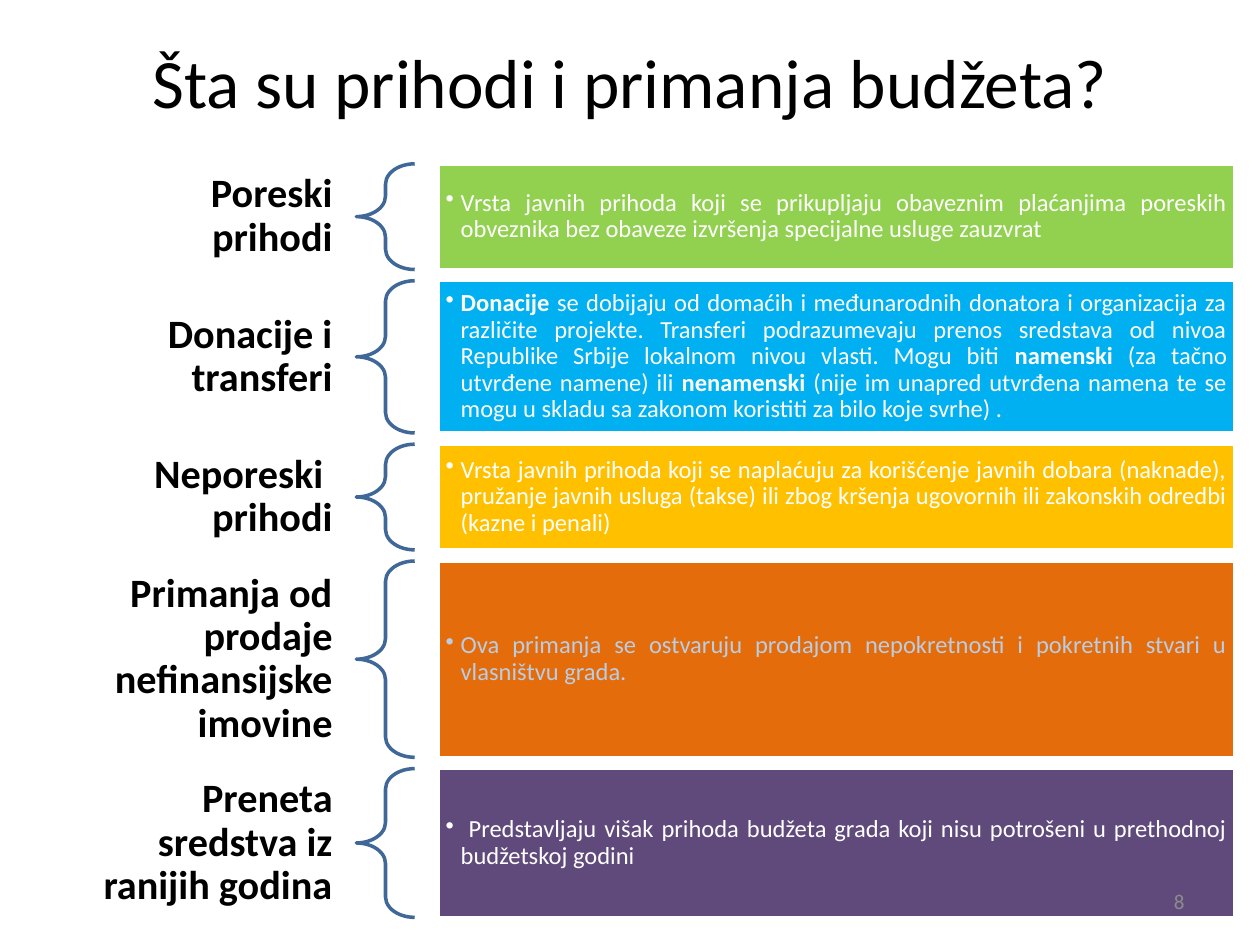
"""Builds the slide on city budget revenues and receipts."""
import pptx
import pptx.dml.color
import pptx.enum.shapes
import pptx.enum.text
import pptx.oxml
import pptx.oxml.ns
import pptx.util

Pt = pptx.util.Pt
SHAPE = pptx.enum.shapes.MSO_SHAPE
ALIGN = pptx.enum.text.PP_ALIGN

COLOURS = {
    "black": "000000", "white": "FFFFFF", "brace": "3F6797", "number": "8C8C8C",
    "green": "92D050", "blue": "00B0F0", "amber": "FFC000",
    "orange": "E46C0A", "purple": "604A7B", "pale": "B9CDE5",
}
TITLE = "Šta su prihodi i primanja budžeta?"
PAGE_NUMBER = "8"
REVENUES = [
    ("Poreski prihodi", 60.4, "green", "white", [
        ("Vrsta javnih prihoda koji se prikupljaju obaveznim plaćanjima poreskih "
         "obveznika bez obaveze izvršenja specijalne usluge zauzvrat", False)]),
    ("Donacije i\ntransferi", 87, "blue", "white", [
        ("Donacije", True),
        (" se dobijaju od domaćih i međunarodnih donatora i organizacija za različite "
         "projekte. Transferi podrazumevaju prenos sredstava od nivoa Republike Srbije "
         "lokalnom nivou vlasti. Mogu biti ", False),
        ("namenski", True),
        (" (za tačno utvrđene namene) ili ", False),
        ("nenamenski ", True),
        ("(nije im unapred utvrđena namena te se mogu u skladu sa zakonom koristiti "
         "za bilo koje svrhe) .", False)]),
    ("Neporeski \nprihodi", 60.4, "amber", "white", [
        ("Vrsta javnih prihoda koji se naplaćuju za korišćenje javnih dobara (naknade), "
         "pružanje javnih usluga (takse) ili zbog kršenja ugovornih ili zakonskih "
         "odredbi (kazne i penali)", False)]),
    ("Primanja od prodaje nefinansijske imovine", 112.2, "orange", "pale", [
        ("Ova primanja se ostvaruju prodajom nepokretnosti i pokretnih stvari u "
         "vlasništvu grada.", False)]),
    ("Preneta sredstva iz ranijih godina", 85, "purple", "white", [
        (" Predstavljaju višak prihoda budžeta grada koji nisu potrošeni u prethodnoj "
         "budžetskoj godini", False)]),
]
FIRST_TOP, ROW_GAP = 93.6, 6.4
LABEL_LEFT, LABEL_WIDTH = 36, 167
BRACE_LEFT, BRACE_WIDTH = 203.6, 33.4
PANEL_LEFT, PANEL_WIDTH = 250.4, 455
BULLET_INDENT = 8.64


def colour(name):
    return pptx.dml.color.RGBColor.from_string(COLOURS[name])


def style_frame(frame, size, text_colour, align, side=7.2, edge=3.6):
    frame.word_wrap = True
    frame.vertical_anchor = pptx.enum.text.MSO_ANCHOR.MIDDLE
    frame.margin_left = frame.margin_right = Pt(side)
    frame.margin_top = frame.margin_bottom = Pt(edge)
    paragraph = frame.paragraphs[0]
    paragraph.alignment = align
    paragraph.font.name = "Calibri"
    paragraph.font.size = Pt(size)
    paragraph.font.color.rgb = colour(text_colour)
    return paragraph


def add_text(slide, text, box, *style):
    frame = slide.shapes.add_textbox(*map(Pt, box)).text_frame
    paragraph = style_frame(frame, *style)
    paragraph.text = text
    return paragraph


def add_outline(slide, kind, box, line_colour):
    shape = slide.shapes.add_shape(kind, *map(Pt, box))
    shape.shadow.inherit = False
    shape.line.color.rgb = colour(line_colour)
    shape.line.width = Pt(2)
    return shape


def add_bullet(paragraph):
    properties = paragraph._p.get_or_add_pPr()
    properties.set("marL", str(Pt(BULLET_INDENT)))
    properties.set("indent", str(-Pt(BULLET_INDENT)))
    bullet = pptx.oxml.parse_xml(
        f'<a:buChar {pptx.oxml.ns.nsdecls("a")} char="•"/>')
    properties.find(pptx.oxml.ns.qn("a:defRPr")).addprevious(bullet)


def add_revenue(slide, top, label, height, fill, text_colour, description):
    name = add_text(slide, label, (LABEL_LEFT, top, LABEL_WIDTH, height),
                    23, "black", ALIGN.RIGHT, 12.8, 4.6)
    name.font.bold = True
    name.line_spacing = 0.9

    brace = add_outline(slide, SHAPE.LEFT_BRACE,
                        (BRACE_LEFT, top, BRACE_WIDTH, height), "brace")
    brace.fill.background()
    brace.adjustments[0] = 0.35
    brace.adjustments[1] = 0.5

    panel = add_outline(slide, SHAPE.RECTANGLE,
                        (PANEL_LEFT, top, PANEL_WIDTH, height), "white")
    panel.fill.solid()
    panel.fill.fore_color.rgb = colour(fill)
    detail = style_frame(panel.text_frame, 14, text_colour, ALIGN.JUSTIFY, 4.2, 4.2)
    detail.level = 1
    detail.line_spacing = 0.9
    add_bullet(detail)
    for text, bold in description:
        run = detail.add_run()
        run.text = text
        run.font.bold = bold


def main():
    deck = pptx.Presentation()
    deck.slide_width, deck.slide_height = Pt(720), Pt(540)
    slide = deck.slides.add_slide(deck.slide_layouts[6])
    add_text(slide, TITLE, (36, 21.6, 648, 49), 39.6, "black", ALIGN.CENTER)
    top = FIRST_TOP
    for revenue in REVENUES:
        add_revenue(slide, top, *revenue)
        top += revenue[1] + ROW_GAP
    add_text(slide, PAGE_NUMBER, (516, 500.5, 168, 28.8), 12, "number", ALIGN.RIGHT)
    deck.save("out.pptx")


if __name__ == "__main__":
    main()
